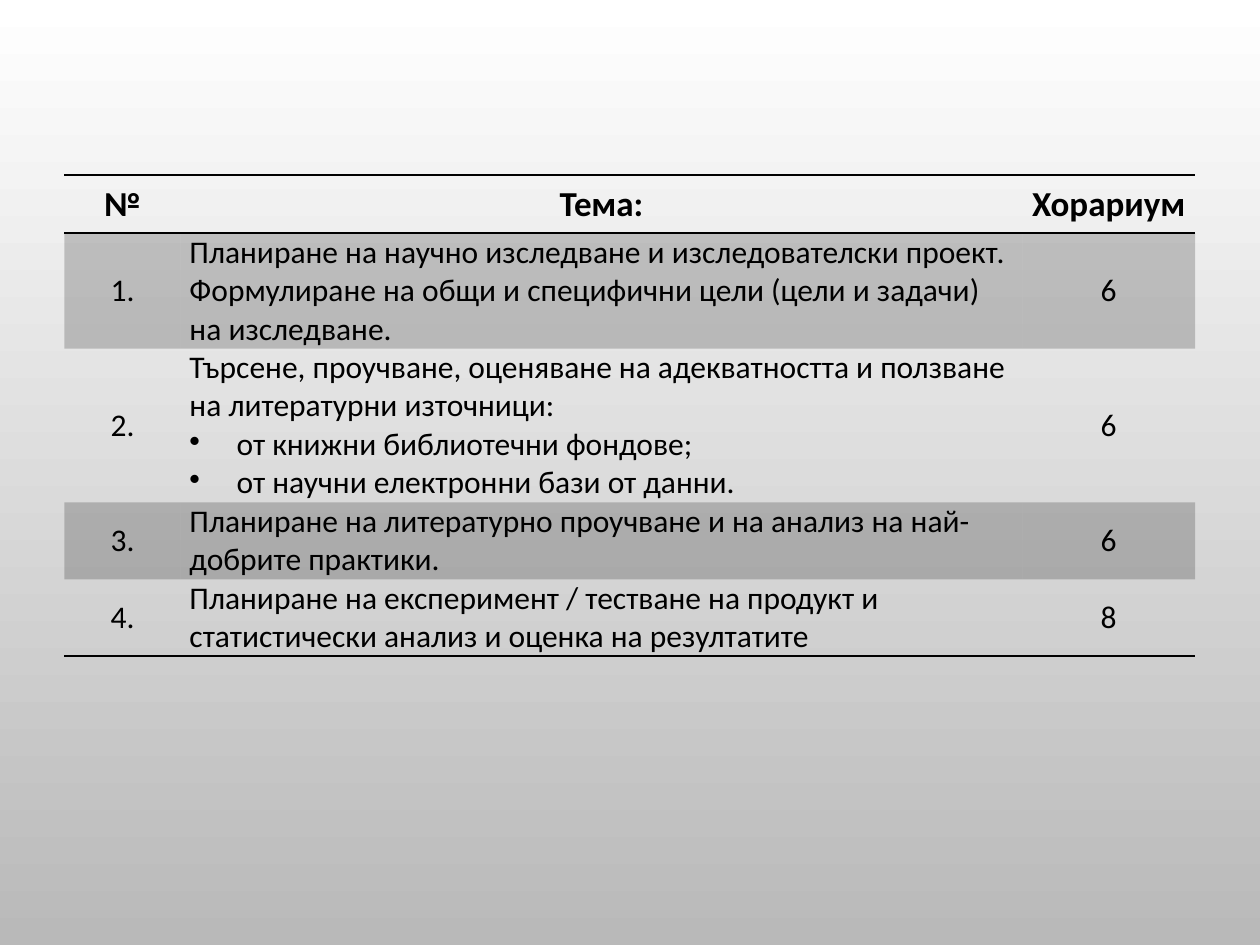
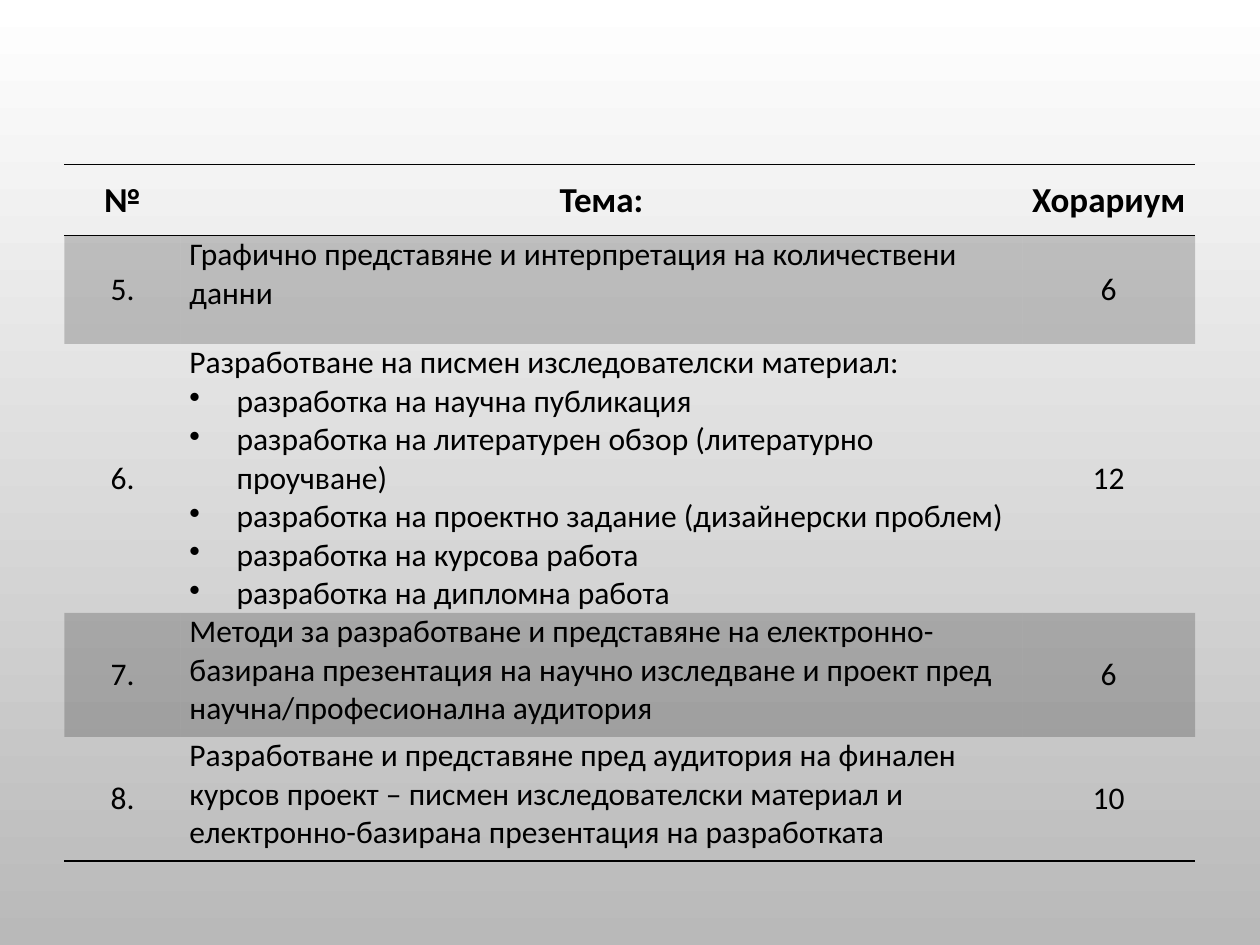
import pptx
import pptx.dml.color
import pptx.enum.text
import pptx.oxml.ns
import pptx.util
from lxml import etree

Cm = pptx.util.Cm
Pt = pptx.util.Pt
qn = pptx.oxml.ns.qn
CENTER = pptx.enum.text.PP_ALIGN.CENTER
LEFT = pptx.enum.text.PP_ALIGN.LEFT
MIDDLE = pptx.enum.text.MSO_ANCHOR.MIDDLE
TOP = pptx.enum.text.MSO_ANCHOR.TOP

# Shared look
BLACK = "000000"
BACKGROUND = ("FFFFFF", "B9B9B9")
BAND_OPACITY = 20
HEADER_FONT = {"name": "Calibri", "size": Pt(20), "bold": True}
BODY_FONT = {"name": "Calibri", "size": Pt(18), "bold": False}
CELL_MARGINS = {"margin_left": Cm(0.18), "margin_right": Cm(0.18),
                "margin_top": 0, "margin_bottom": 0}
NO_STYLE_NO_GRID = "{2D5ABB26-0587-4C30-8999-92F81FD0307C}"
TABLE_LEFT = 1.3
COLUMN_WIDTHS = (2.34, 16.97, 3.48)
HEADINGS = ("№", ["Тема:"], "Хорариум")

# Each topic: number, lead text followed by bulleted items, hours
FIRST_TOPICS = [
    ("1.", ["Планиране на научно изследване и изследователски проект. "
            "Формулиране на общи и специфични цели (цели и задачи) на изследване."], "6"),
    ("2.", ["Търсене, проучване, оценяване на адекватността и ползване на "
            "литературни източници:",
            "от книжни библиотечни фондове;",
            "от научни електронни бази от данни."], "6"),
    ("3.", ["Планиране на литературно проучване и на анализ на "
            "най-добрите практики."], "6"),
    ("4.", ["Планиране на експеримент / тестване на продукт и "
            "статистически анализ и оценка на резултатите"], "8"),
]
SECOND_TOPICS = [
    ("5.", ["Графично представяне и интерпретация на количествени данни"], "6"),
    ("6.", ["Разработване на писмен изследователски материал:",
            "разработка на научна публикация",
            "разработка на литературен обзор (литературно проучване)",
            "разработка на проектно задание (дизайнерски проблем)",
            "разработка на курсова работа",
            "разработка на дипломна работа"], "12"),
    ("7.", ["Методи за разработване и представяне на електронно-базирана "
            "презентация на научно изследване и проект пред "
            "научна/професионална аудитория"], "6"),
    ("8.", ["Разработване и представяне пред аудитория на финален курсов "
            "проект – писмен изследователски материал и електронно-базирана "
            "презентация на разработката"], "10"),
]


def color(value):
    return pptx.dml.color.RGBColor.from_string(value)


def apply_format(target, values):
    for name, value in values.items():
        setattr(target, name, value)


def set_background(master):
    fill = master.background.fill
    fill.gradient()
    fill.gradient_angle = 270
    for stop, value in zip(fill.gradient_stops, BACKGROUND):
        stop.color.rgb = color(value)


def add_bullet(paragraph):
    properties = paragraph._p.get_or_add_pPr()
    properties.set("marL", str(Cm(0.95)))
    properties.set("indent", str(-Cm(0.95)))
    etree.SubElement(properties, qn("a:buChar"), char="•")
    tabs = etree.SubElement(properties, qn("a:tabLst"))
    etree.SubElement(tabs, qn("a:tab"), pos=str(Cm(0.64)), algn="l")


def write_cell(cell, lines, font, alignment, anchor):
    apply_format(cell, {**CELL_MARGINS, "vertical_anchor": anchor})
    frame = cell.text_frame
    for index, line in enumerate(lines):
        paragraph = frame.add_paragraph() if index else frame.paragraphs[0]
        paragraph.alignment = alignment
        if index:
            add_bullet(paragraph)
        run = paragraph.add_run()
        run.text = line
        apply_format(run.font, font)
        run.font.color.rgb = color(BLACK)


def fill_cell(cell, banded):
    if not banded:
        cell.fill.background()
        return
    cell.fill.solid()
    cell.fill.fore_color.rgb = color(BLACK)
    for value in cell._tc.tcPr.iter(qn("a:srgbClr")):
        etree.SubElement(value, qn("a:alpha"), val=str(BAND_OPACITY * 1000))


def add_borders(cell, sides):
    """Draw the given sides, listed in schema order, ahead of the fill."""
    properties = cell._tc.get_or_add_tcPr()
    for position, side in enumerate(sides):
        line = etree.Element(qn(f"a:ln{side}"), w=str(Pt(1)))
        solid = etree.SubElement(line, qn("a:solidFill"))
        etree.SubElement(solid, qn("a:srgbClr"), val=BLACK)
        properties.insert(position, line)


def add_topic_table(slide, top, row_heights, topics):
    rows = [HEADINGS, *topics]
    shape = slide.shapes.add_table(
        len(rows), len(COLUMN_WIDTHS), Cm(TABLE_LEFT), Cm(top),
        Cm(sum(COLUMN_WIDTHS)), Cm(sum(row_heights)))
    table = shape.table
    apply_format(table, {"first_row": False, "horz_banding": False})
    for style in table._tbl.iter(qn("a:tableStyleId")):
        style.text = NO_STYLE_NO_GRID
    for column, width in zip(table.columns, COLUMN_WIDTHS):
        column.width = Cm(width)
    for row, height in zip(table.rows, row_heights):
        row.height = Cm(height)

    for row_index, row in enumerate(rows):
        is_header = row_index == 0
        is_last = row_index == len(rows) - 1
        font = HEADER_FONT if is_header else BODY_FONT
        sides = "TB" if is_header else "B" if is_last else ""
        for column_index, content in enumerate(row):
            cell = table.cell(row_index, column_index)
            is_topic = column_index == 1
            lines = content if is_topic else [content]
            if is_topic and not is_header:
                write_cell(cell, lines, font, LEFT, TOP)
            else:
                write_cell(cell, lines, font, CENTER, MIDDLE)
            fill_cell(cell, banded=row_index % 2 == 1)
            add_borders(cell, sides)


def main():
    presentation = pptx.Presentation()
    presentation.slide_width = Cm(25.4)
    presentation.slide_height = Cm(19.05)
    set_background(presentation.slide_master)
    blank = presentation.slide_layouts[6]

    # Topics 1 to 4
    slide = presentation.slides.add_slide(blank)
    add_topic_table(slide, 3.53, (1.17, 2.32, 3.1, 1.55, 1.55), FIRST_TOPICS)

    # Topics 5 to 8
    slide = presentation.slides.add_slide(blank)
    add_topic_table(slide, 3.32, (1.43, 2.18, 5.42, 2.5, 2.5), SECOND_TOPICS)

    presentation.save("out.pptx")


if __name__ == "__main__":
    main()
